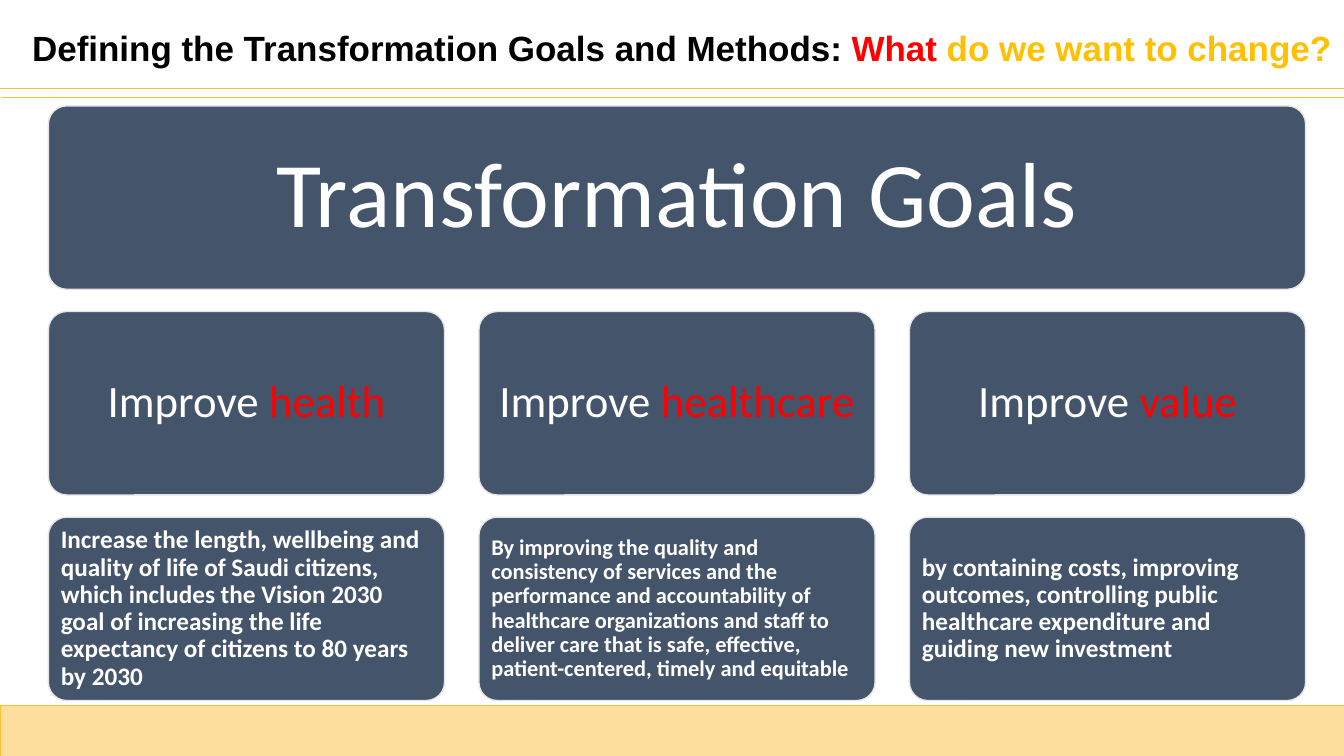
from lxml import etree
from pptx import Presentation
from pptx.dml.color import RGBColor
from pptx.enum.shapes import MSO_CONNECTOR, MSO_SHAPE
from pptx.enum.text import MSO_ANCHOR, PP_ALIGN
from pptx.oxml.ns import qn
from pptx.util import Inches, Pt

STRAIGHT = MSO_CONNECTOR.STRAIGHT
RECT, ROUND = MSO_SHAPE.RECTANGLE, MSO_SHAPE.ROUNDED_RECTANGLE
MIDDLE = MSO_ANCHOR.MIDDLE
LEFT, CENTER = PP_ALIGN.LEFT, PP_ALIGN.CENTER

BLACK = RGBColor(0x00, 0x00, 0x00)
WHITE = RGBColor(0xFF, 0xFF, 0xFF)
RED = RGBColor(0xFF, 0x00, 0x00)
AMBER = RGBColor(0xFF, 0xC0, 0x00)
GOLD = RGBColor(0xFF, 0xBF, 0x35)
CREAM = RGBColor(0xFF, 0xDF, 0x9B)
SLATE = RGBColor(0x44, 0x54, 0x6A)
PALE = RGBColor(0xE7, 0xE6, 0xE6)

WIDTH, HEIGHT = 13.33, 7.5
START, TOP = 0.48, 1.05
CARD, TALL = 3.93, 1.82
STEP, DROP = 4.27, 2.04

deck = Presentation()
deck.slide_width, deck.slide_height = Inches(WIDTH), Inches(HEIGHT)
slide = deck.slides.add_slide(deck.slide_layouts[6])
shapes = slide.shapes


def write(para, runs, look):
    """Add (text, colour) runs that share the font values in look."""
    for text, color in runs:
        run = para.add_run()
        run.text = text
        run.font.color.rgb = color
        for key, value in look.items():
            setattr(run.font, key, value)


def add_box(kind, place, fill, edge, weight):
    box = shapes.add_shape(kind, *map(Inches, place))
    box.shadow.inherit = False
    box.fill.solid()
    box.fill.fore_color.rgb = fill
    box.line.color.rgb = edge
    box.line.width = Pt(weight)
    return box


# Rules and footer band
for left, top in ((0, 0.88), (0.01, 0.97)):
    rule = shapes.add_connector(STRAIGHT, Inches(left), Inches(top),
                                Inches(left + WIDTH), Inches(top))
    rule.line.color.rgb = GOLD
    rule.line.width = Pt(1)
    etree.SubElement(rule._element.spPr, qn("a:effectLst"))
add_box(RECT, (0, 7, WIDTH, 0.5), CREAM, GOLD, 0.5)

# Title
title = shapes.add_textbox(Inches(0.22), Inches(0.21), Inches(13.88), Inches(0.52))
title.text_frame.word_wrap = True
write(title.text_frame.paragraphs[0],
      [("Defining the Transformation Goals and Methods: ", BLACK),
       ("What", RED), (" do we want to change?", AMBER)],
      {"name": "Arial", "size": Pt(25), "bold": True})

# Cards: column, row, width, runs, size, bold, align, inset
cards = [(0, 0, 2 * STEP + CARD, [("Transformation Goals", WHITE)], 66, False, CENTER, 0.28)]
goals = [
    ("health", 18, "Increase the length, wellbeing and quality of life of Saudi citizens, "
     "which includes the Vision 2030 goal of increasing the life expectancy of citizens "
     "to 80 years by 2030"),
    ("healthcare", 16, "By improving the quality and consistency of services and the "
     "performance and accountability of healthcare organizations and staff to deliver "
     "care that is safe, effective, patient-centered, timely and equitable"),
    ("value", 18, "by containing costs, improving outcomes, controlling public "
     "healthcare expenditure and guiding new investment"),
]
for col, (goal, size, method) in enumerate(goals):
    cards += [
        (col, 1, CARD, [("Improve ", WHITE), (goal, RED)], 32, False, CENTER, 0.13),
        (col, 2, CARD, [(method, WHITE)], size, True, LEFT, 0.07),
    ]

for col, row, width, runs, size, bold, align, inset in cards:
    place = (START + col * STEP, TOP + row * DROP, width, TALL)
    card = add_box(ROUND, place, SLATE, PALE, 1)
    card.adjustments[0] = 0.1
    frame = card.text_frame
    frame.word_wrap = True
    frame.vertical_anchor = MIDDLE
    for side in ("left", "top", "right", "bottom"):
        setattr(frame, "margin_" + side, Inches(inset))
    para = frame.paragraphs[0]
    para.alignment = align
    para.line_spacing = 0.9
    write(para, runs, {"name": "Calibri", "size": Pt(size), "bold": bold})

deck.save("out.pptx")
